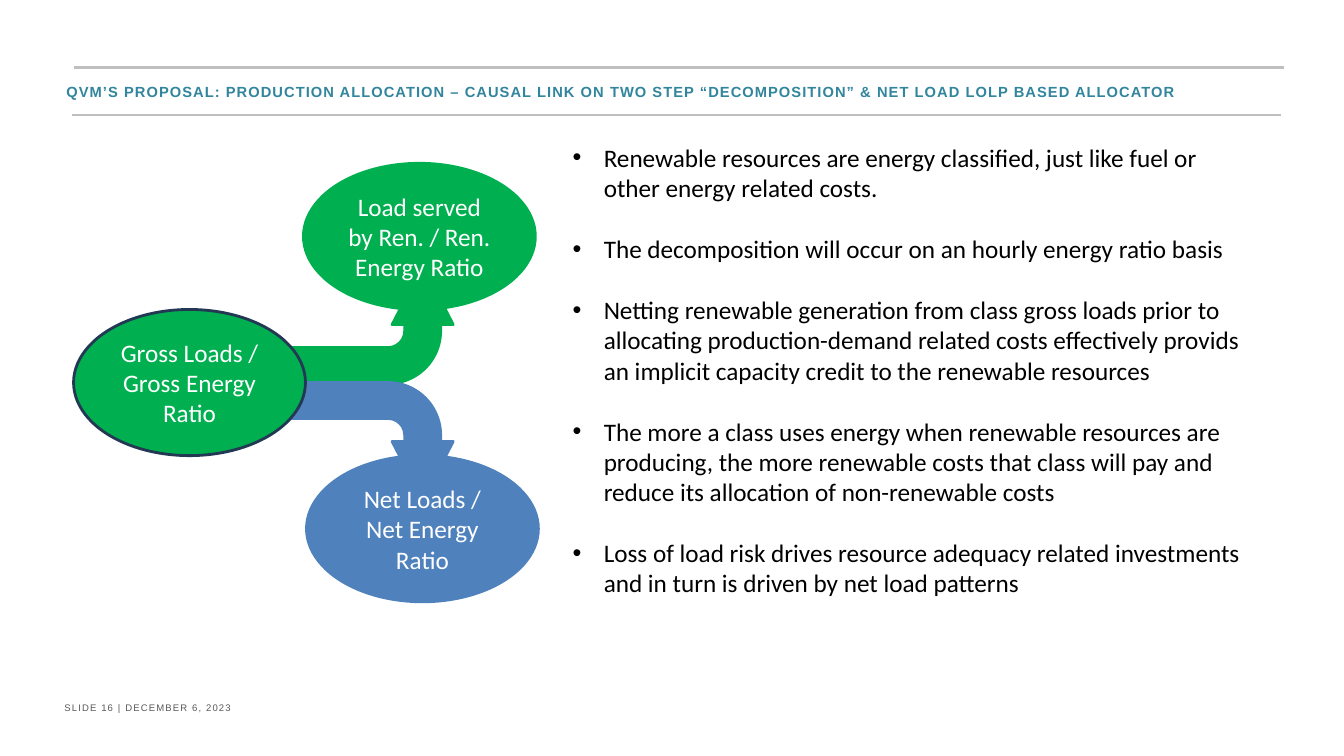
from pptx import Presentation
from pptx import util as u
from pptx.dml.color import RGBColor
from pptx.enum import shapes, text
from lxml import etree

HUES = {"rule": "BFBFBF", "foot": "595959", "title": "31859C", "green": "00B050",
        "blue": "4F81BD", "navy": "233953", "white": "FFFFFF", "black": "000000"}
NS = "{http://schemas.openxmlformats.org/drawingml/2006/main}"
POINTS = [
    "Renewable resources are energy classified, just like fuel or other energy related costs.",
    "The decomposition will occur on an hourly energy ratio basis",
    "Netting renewable generation from class gross loads prior to allocating "
    "production-demand related costs effectively provids an implicit capacity credit "
    "to the renewable resources",
    "The more a class uses energy when renewable resources are producing, the more "
    "renewable costs that class will pay and reduce its allocation of non-renewable costs",
    "Loss of load risk drives resource adequacy related investments and in turn is "
    "driven by net load patterns",
]


def hue(name):
    return RGBColor.from_string(HUES[name])


def inch(*vals):
    return [u.Inches(v) for v in vals]


def style(para, face, size, color, bold=False):
    font = para.font
    font.name, font.size, font.bold = face, u.Pt(size), bold
    font.color.rgb = hue(color)


def frame(slide, box):
    body = slide.shapes.add_textbox(*inch(*box)).text_frame
    body.word_wrap = True
    return body


def label(slide, box, words, size, color, bold=False):
    """One line of spaced capitals."""
    body = frame(slide, box)
    body.vertical_anchor = text.MSO_ANCHOR.MIDDLE
    para = body.paragraphs[0]
    run = para.add_run()
    run.text = words
    style(para, "Arial", size, color, bold)
    run.font._element.set("spc", "80")


def rule(slide, left, top, width):
    line = slide.shapes.add_connector(
        shapes.MSO_CONNECTOR.STRAIGHT, *inch(left, top, left + width, top))
    line.line.color.rgb = hue("rule")
    line.line.width = u.Pt(1.5)
    etree.SubElement(line._element.spPr, NS + "effectLst")


def shape(slide, kind, box, fill, edge):
    item = slide.shapes.add_shape(kind, *inch(*box))
    item.shadow.inherit = False
    item.fill.solid()
    item.fill.fore_color.rgb = hue(fill)
    item.line.color.rgb = hue(edge)
    item.line.width = u.Pt(2)
    return item


def header(slide, left, top, width, height):
    rule(slide, left + 0.17, top, 12)
    rule(slide, left + 0.15, top + height, 12)
    label(slide, (left, top, width, height),
          "QVM’S PROPOSAL: PRODUCTION ALLOCATION – CAUSAL LINK ON TWO STEP "
          "“DECOMPOSITION” & NET LOAD LOLP BASED ALLOCATOR", 10.5, "title", True)


def diagram(slide, left, top):
    """Gross loads split upward into renewable and downward into net loads."""
    wide, high = 2.3, 1.45
    # Arrows
    for drop, color, flip in ((0, "green", True), (1.16, "blue", False)):
        arrow = shape(slide, shapes.MSO_SHAPE.BENT_ARROW,
                      (left + 1.57, top - 0.01 + drop, 1.17, 3.22), color, color)
        for i, share in enumerate((0.305, 0.259, 0.5, 0.446)):
            arrow.adjustments[i] = share
        arrow.rotation = 90
        if flip:
            arrow._element.spPr.find(NS + "xfrm").set("flipH", "1")
    # Ovals
    ovals = (("Gross Loads / Gross Energy Ratio", 0, 1, "green", "navy"),
             ("Load served by Ren. / Ren. Energy Ratio", 2.28, 0, "green", "green"),
             ("Net Loads / Net Energy Ratio", 2.31, 2, "blue", "blue"))
    for words, shift, row, fill, edge in ovals:
        oval = shape(slide, shapes.MSO_SHAPE.OVAL,
                     (left + shift, top + row * high, wide, high), fill, edge)
        body = oval.text_frame
        body.word_wrap = True
        body.vertical_anchor = text.MSO_ANCHOR.MIDDLE
        para = body.paragraphs[0]
        para.text = words
        para.alignment = text.PP_ALIGN.CENTER
        style(para, "Calibri", 18, "white")


def bullets(slide, box):
    body = frame(slide, box)
    for i, words in enumerate(POINTS):
        para = body.add_paragraph() if i else body.paragraphs[0]
        para.text = words
        if i:
            para.space_before = u.Pt(22)
        props = para._p.get_or_add_pPr()
        props.set("marL", str(u.Inches(0.31)))
        props.set("indent", str(-u.Inches(0.31)))
        etree.SubElement(props, NS + "buFont", typeface="Arial")
        etree.SubElement(props, NS + "buChar", char="•")
        style(para, "Calibri", 18, "black")


def main():
    deck = Presentation()
    deck.slide_width, deck.slide_height = inch(13.33, 7.5)
    slide = deck.slides.add_slide(deck.slide_layouts[6])
    header(slide, 0.56, 0.67, 12.22, 0.47)
    diagram(slide, 0.73, 1.62)
    bullets(slide, (5.58, 1.36, 6.88, 5.55))
    # Footer
    label(slide, (0.54, 6.92, 3.57, 0.21), "SLIDE 16 | DECEMBER 6, 2023", 6.8, "foot")
    deck.save("out.pptx")


if __name__ == "__main__":
    main()
